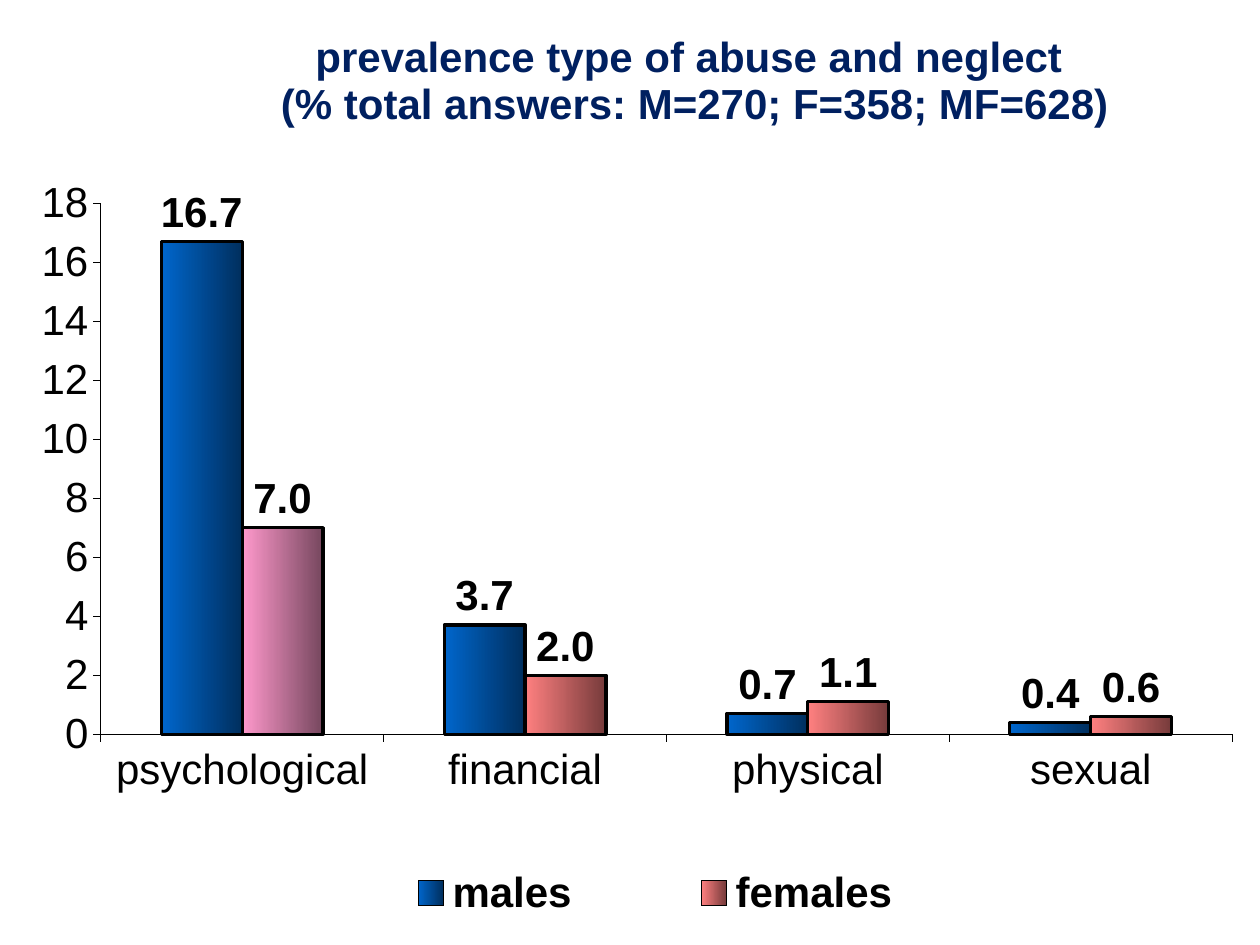
from lxml import etree
from pptx import Presentation, util as u
from pptx.chart import data as chart_data
from pptx.dml import color
from pptx.enum import chart as kinds, text
from pptx.oxml import ns

COLORS = {
    "text": "000000", "title": "002060",
    "males": ("0066CC", "002F5E"),
    "females": ("FF8080", "763B3B"),
    "highlight": ("FF99CC", "76475E"),
}


def place(element, index, **fractions):
    for old in element.findall(ns.qn("c:layout")):
        element.remove(old)
    layout = etree.Element(ns.qn("c:layout"))
    manual = etree.SubElement(layout, ns.qn("c:manualLayout"))
    for name, value in fractions.items():
        etree.SubElement(manual, ns.qn(f"c:{name}"), val=str(value))
    element.insert(index, layout)


def paint(target, ends):
    target.fill.gradient()
    target.fill.gradient_angle = 0
    for stop, hex_value, position in zip(target.fill.gradient_stops, ends, (0, 1)):
        stop.color.rgb = color.RGBColor.from_string(hex_value)
        stop.position = position
    target.line.color.rgb = color.RGBColor.from_string(COLORS["text"])
    target.line.width = u.Pt(1.85)


deck = Presentation()
deck.slide_width, deck.slide_height = u.Inches(10), u.Inches(7.5)
page = deck.slides.add_slide(deck.slide_layouts[6])

abuse = chart_data.CategoryChartData(number_format="0.0")
abuse.categories = ["psychological", "financial", "physical", "sexual"]
abuse.add_series("males", [16.7, 3.7, 0.7, 0.4])
abuse.add_series("females", [7, 2, 1.1, 0.6])
chart = page.shapes.add_chart(
    kinds.XL_CHART_TYPE.COLUMN_CLUSTERED, 0, 0,
    deck.slide_width, deck.slide_height, abuse).chart
plot = chart.plots[0]
plot.gap_width, plot.overlap = 150, 0
plot.vary_by_categories = False

title = chart.chart_title
title.include_in_layout = False
frame = title.text_frame
frame.text = "prevalence type of abuse and neglect \n(% total answers: M=270; F=358; MF=628)"
for para in frame.paragraphs:
    para.alignment = text.PP_ALIGN.CENTER

chart.has_legend = True
legend = chart.legend
legend.position = kinds.XL_LEGEND_POSITION.RIGHT
legend.include_in_layout = False

values, categories = chart.value_axis, chart.category_axis
values.minimum_scale, values.maximum_scale, values.major_unit = 0, 18, 2
values.has_major_gridlines = False
values.tick_labels.number_format = "0"
values.tick_labels.number_format_is_linked = False
for axis in (values, categories):
    axis.major_tick_mark = kinds.XL_TICK_MARK.OUTSIDE
    axis.format.line.color.rgb = color.RGBColor.from_string(COLORS["text"])
    axis.format.line.width = u.Pt(0.46)

fonts = [(chart.font, "text", False), (legend.font, "text", True),
         (values.tick_labels.font, "text", False),
         (categories.tick_labels.font, "text", False)]
fonts += [(span.font, "title", True) for para in frame.paragraphs for span in para.runs]
for series in plot.series:
    paint(series.format, COLORS[series.name])
    series.invert_if_negative = False
    labels = series.data_labels
    labels.show_value = True
    labels.number_format = "0.0"
    labels.number_format_is_linked = False
    labels.position = kinds.XL_LABEL_POSITION.OUTSIDE_END
    fonts.append((labels.font, "text", True))
paint(plot.series[1].points[0].format, COLORS["highlight"])

for font, tone, bold in fonts:
    for name, value in {"name": "Arial", "size": u.Pt(24), "bold": bold}.items():
        setattr(font, name, value)
    font.color.rgb = color.RGBColor.from_string(COLORS[tone])

place(title._element, 1, xMode="edge", yMode="edge", x=0.22, y=0.03)
place(legend._element, 1, xMode="edge", yMode="edge", x=0.24, y=0.91, w=0.56, h=0.07)
place(chart._chartSpace.chart.plotArea, 0, layoutTarget="inner",
      xMode="edge", yMode="edge", x=0.08, y=0.215, w=0.898, h=0.562)

deck.save("out.pptx")
